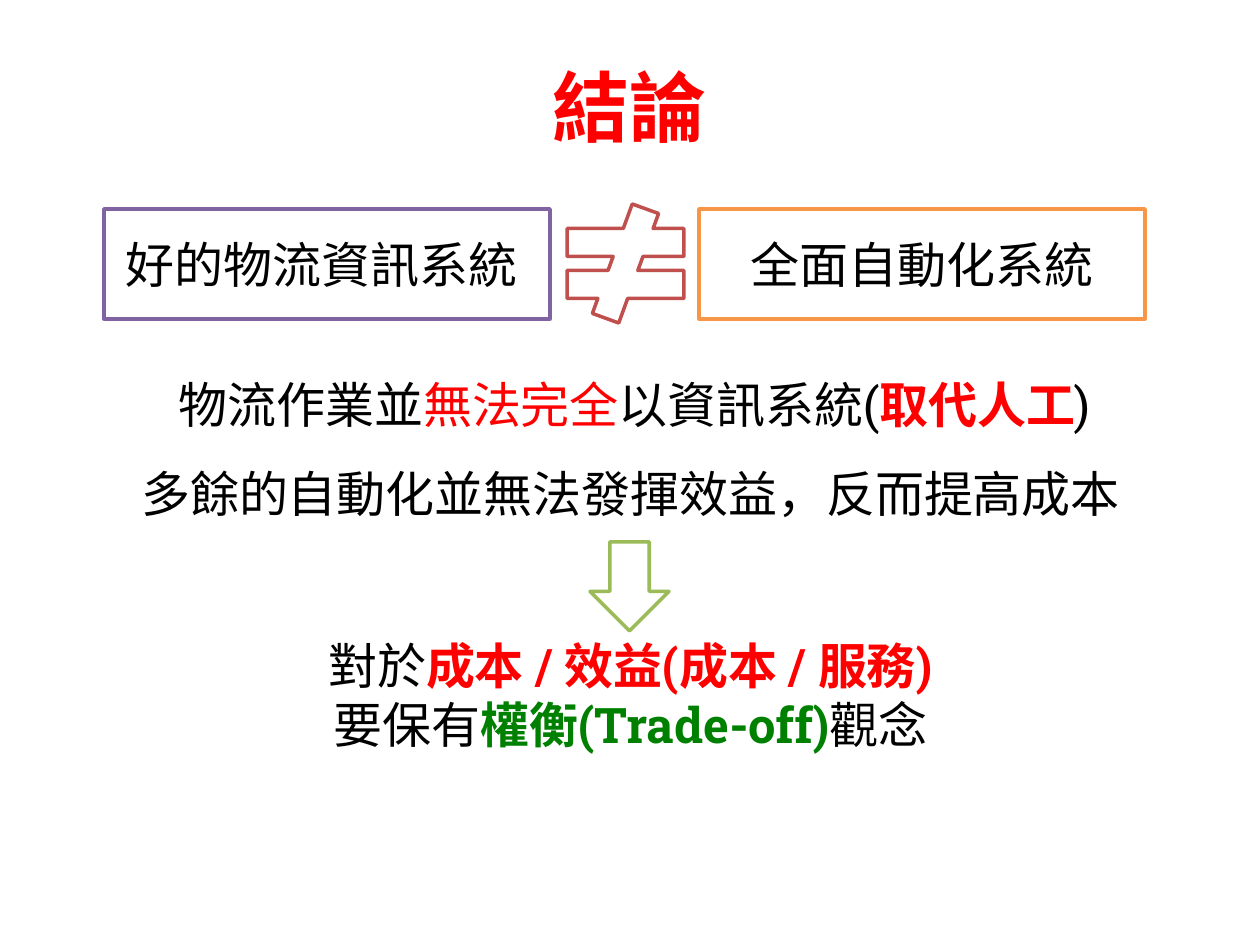
from pptx import Presentation
from pptx.dml.color import RGBColor
from pptx.enum.shapes import MSO_SHAPE
from pptx.enum.text import MSO_ANCHOR, PP_ALIGN
from pptx.util import Pt

EMU_PER_PX = 914400 / 126
FONT = "Roboto Slab"
BLACK, RED, GREEN, WHITE = "000000", "FF0000", "008000", "FFFFFF"
RECT, NOT_EQUAL, DOWN_ARROW = MSO_SHAPE.RECTANGLE, MSO_SHAPE.MATH_NOT_EQUAL, MSO_SHAPE.DOWN_ARROW
CENTER, MIDDLE, TOP = PP_ALIGN.CENTER, MSO_ANCHOR.MIDDLE, MSO_ANCHOR.TOP


def px(n):
    """Turn pixels into EMU."""
    return round(n * EMU_PER_PX)


def rgb(value):
    """Turn a hex string into a colour."""
    return RGBColor.from_string(value)


def write(tf, lines, size=28, anchor=MIDDLE):
    """Fill a frame with centred lines of (text, colour, bold) runs."""
    tf.word_wrap = True
    tf.vertical_anchor = anchor
    for i, runs in enumerate(lines):
        p = tf.add_paragraph() if i else tf.paragraphs[0]
        p.alignment = CENTER
        p.font.name = FONT
        p.font.size = Pt(size)
        for text, color, bold in runs:
            r = p.add_run()
            r.text = text
            r.font.color.rgb = rgb(color)
            r.font.bold = bold


def add_text(slide, box, lines, size=28, anchor=TOP):
    """Add a text box."""
    sp = slide.shapes.add_textbox(*map(px, box))
    write(sp.text_frame, lines, size, anchor)


def add_outline(slide, kind, box, color, text=None):
    """Add a white shape with a coloured outline and optional label."""
    sp = slide.shapes.add_shape(kind, *map(px, box))
    sp.shadow.inherit = False
    sp.fill.solid()
    sp.fill.fore_color.rgb = rgb(WHITE)
    sp.line.color.rgb = rgb(color)
    sp.line.width = Pt(2)
    if text:
        write(sp.text_frame, [[(text, BLACK, False)]])


def main():
    """Build the conclusion slide."""
    prs = Presentation()
    prs.slide_width, prs.slide_height = px(1260), px(945)
    slide = prs.slides.add_slide(prs.slide_layouts[6])

    add_text(slide, (63, 27, 1134, 157), [[("結論", RED, True)]], 44, MIDDLE)
    add_outline(slide, RECT, (104, 209, 446, 110), "8064A2", "好的物流資訊系統 ")
    add_outline(slide, RECT, (699, 209, 446, 110), "F79646", "全面自動化系統")
    add_outline(slide, NOT_EQUAL, (546, 204, 159, 119), "C0504D")
    add_text(slide, (84, 368, 1101, 72), [[
        ("物流作業並", BLACK, False),
        ("無法完全", RED, False),
        ("以資訊系統(", BLACK, False),
        ("取代人工", RED, True),
        (")", BLACK, False),
    ]])
    add_text(slide, (112, 629, 1037, 131), [
        [("對於", BLACK, False), ("成本 / 效益(成本 / 服務)", RED, True)],
        [("要保有", BLACK, False), ("權衡(Trade-off)", GREEN, True), ("觀念", BLACK, False)],
    ])
    add_text(slide, (95, 457, 1071, 72), [[("多餘的自動化並無法發揮效益，反而提高成本", BLACK, False)]])
    add_outline(slide, DOWN_ARROW, (590, 542, 79, 89), "9BBB59")

    prs.save("out.pptx")


if __name__ == "__main__":
    main()
